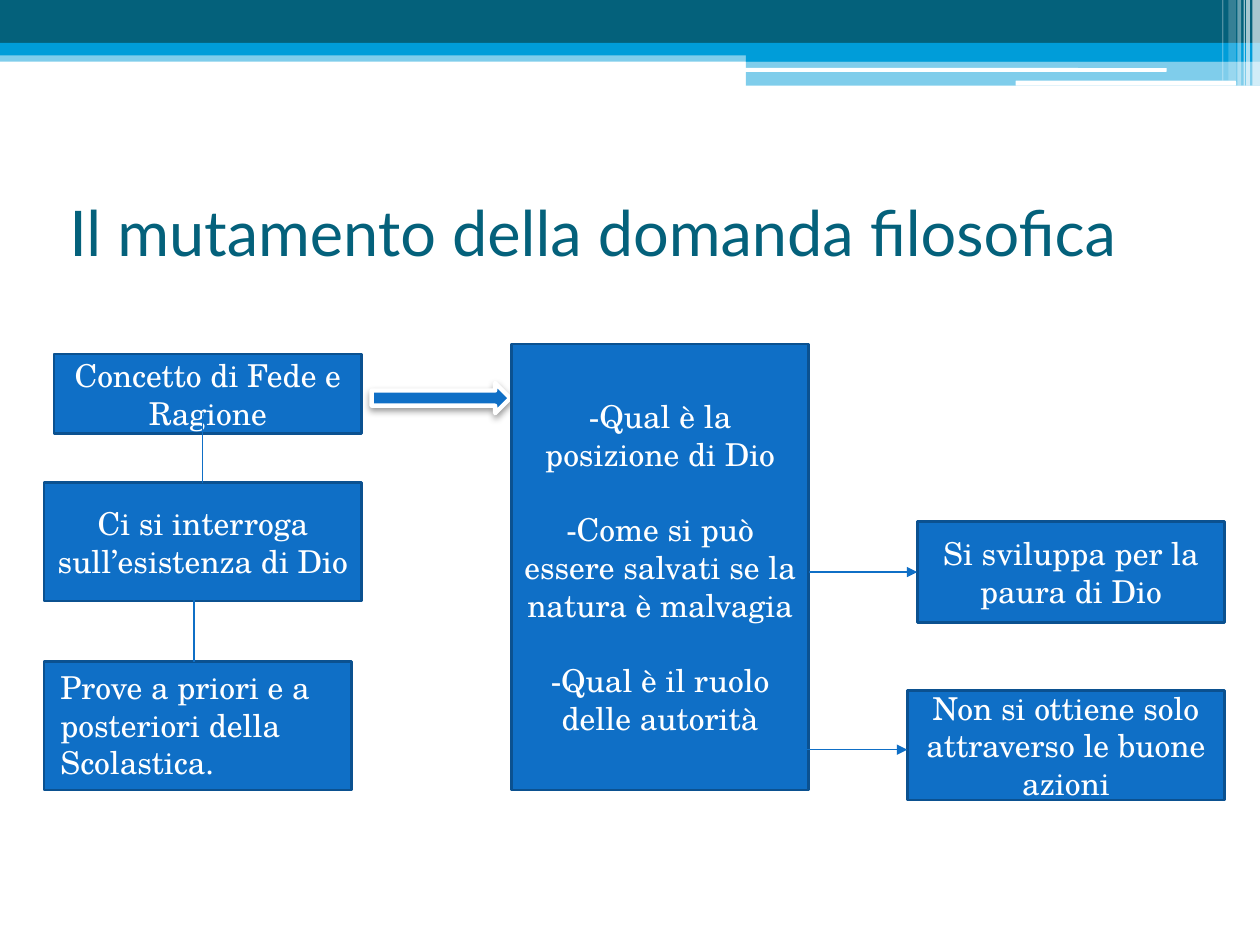
from lxml import etree
from pptx import Presentation
from pptx.dml.color import RGBColor
from pptx.enum.shapes import MSO_CONNECTOR, MSO_SHAPE
from pptx.enum.text import MSO_ANCHOR, PP_ALIGN
from pptx.oxml.ns import qn
from pptx.util import Inches, Pt

RECT = MSO_SHAPE.RECTANGLE
ROUND = MSO_SHAPE.ROUNDED_RECTANGLE
ARROW = MSO_SHAPE.RIGHT_ARROW
STRAIGHT = MSO_CONNECTOR.STRAIGHT
TOP, MIDDLE = MSO_ANCHOR.TOP, MSO_ANCHOR.MIDDLE
LEFT, CENTER = PP_ALIGN.LEFT, PP_ALIGN.CENTER
TOP_SIDE, LEFT_SIDE = 0, 1


def rgb(hex_color):
    return RGBColor.from_string(hex_color)


def child(parent, tag, **attrs):
    """Append a DrawingML element with the given attributes."""
    return etree.SubElement(parent, qn(tag), {k: str(v) for k, v in attrs.items()})


class SlideBuilder:
    """Style of the deck and the slide being filled."""

    white, teal, sky = "FFFFFF", "04617B", "009DD9"
    blue, border = "0F6FC6", "0B5190"
    title_font, body_font = "Lato", "TeX Gyre Schola"
    inset = 0.05

    def __init__(self, slide):
        self.slide = slide

    def shape(self, kind, x, y, w, h, fill, alpha=100, line=None, line_pt=1.5):
        sp = self.slide.shapes.add_shape(
            kind, Inches(x), Inches(y), Inches(w), Inches(h))
        sp.shadow.inherit = False
        sp.fill.solid()
        sp.fill.fore_color.rgb = rgb(fill)
        if alpha < 100:
            color = sp._element.spPr.find(qn("a:solidFill"))[0]
            child(color, "a:alpha", val=alpha * 1000)
        if line:
            sp.line.color.rgb = rgb(line)
            sp.line.width = Pt(line_pt)
        else:
            sp.line.fill.background()
        return sp

    def text(self, sp, lines, font, size, color, align, anchor, gap=0, left=inset):
        tf = sp.text_frame
        tf.word_wrap = True
        tf.vertical_anchor = anchor
        tf.margin_left = Inches(left)
        tf.margin_right = tf.margin_top = tf.margin_bottom = Inches(self.inset)
        for i, line in enumerate(lines):
            p = tf.add_paragraph() if i else tf.paragraphs[0]
            p.text = line
            p.alignment = align
            p.space_before = Pt(gap if i else 0)
            p.font.name = font
            p.font.size = Pt(size)
            p.font.color.rgb = rgb(color)

    def title(self, x, y, w, h, text):
        sp = self.slide.shapes.add_textbox(
            Inches(x), Inches(y), Inches(w), Inches(h))
        self.text(sp, [text], self.title_font, 36, self.teal, LEFT, MIDDLE)

    def box(self, x, y, w, h, *lines, align=CENTER, anchor=MIDDLE, left=inset):
        sp = self.shape(RECT, x, y, w, h, self.blue, line=self.border)
        self.text(sp, lines, self.body_font, 18, self.white, align, anchor,
                  gap=21.6, left=left)
        return sp

    def block_arrow(self, x, y, w, h):
        sp = self.shape(ARROW, x, y, w, h, self.blue, line=self.white, line_pt=2.5)
        effects = sp._element.spPr.find(qn("a:effectLst"))
        shadow = child(effects, "a:outerShdw", blurRad=Pt(4), dist=Pt(2),
                       dir=90 * 60000, rotWithShape=0)
        child(child(shadow, "a:srgbClr", val="000000"), "a:alpha", val=40000)

    def connector(self, x1, y1, x2, y2, target=None, side=None, arrow=False):
        cxn = self.slide.shapes.add_connector(
            STRAIGHT, Inches(x1), Inches(y1), Inches(x2), Inches(y2))
        if target is not None:
            cxn.end_connect(target, side)
        cxn.line.color.rgb = rgb(self.blue)
        cxn.line.width = Pt(0.75)
        if arrow:
            child(cxn.line._get_or_add_ln(), "a:tailEnd", type="triangle")
        child(cxn._element.spPr, "a:effectLst")

    def header(self):
        bands = [
            (RECT, 0, 0.4, 10, 0.09, self.sky, 50),
            (RECT, 0, 0, 10, 0.34, self.teal, 100),
            (RECT, 0, 0.34, 10, 0.1, self.sky, 100),
            (RECT, 5.92, 0.39, 4.08, 0.1, self.sky, 100),
            (RECT, 5.92, 0.48, 4.08, 0.2, self.sky, 50),
            (ROUND, 5.91, 0.54, 3.35, 0.03, self.white, 100),
            (ROUND, 8.06, 0.64, 1.75, 0.04, self.white, 100),
        ]
        for band in bands:
            self.shape(*band)
        stripes = [
            (9.94, 0.06, 0.68, 65), (9.89, 0.03, 0.68, 65), (9.87, 0.01, 0.68, 60),
            (9.82, 0.03, 0.68, 40), (9.75, 0.06, 0.64, 20), (9.7, 0.01, 0.64, 30),
        ]
        for x, w, h, alpha in stripes:
            self.shape(RECT, x, 0, w, h, self.white, alpha)


def main():
    prs = Presentation()
    prs.slide_width, prs.slide_height = Inches(10), Inches(7.5)
    s = SlideBuilder(prs.slides.add_slide(prs.slide_layouts[6]))

    s.header()
    s.title(0.5, 1.25, 9, 1.17, "Il mutamento della domanda filosofica")

    s.box(0.43, 2.81, 2.44, 0.63, "Concetto di Fede e Ragione")
    existence = s.box(0.35, 3.83, 2.52, 0.94, "Ci si interroga sull’esistenza di Dio")
    s.box(0.35, 5.25, 2.44, 1.02, "Prove a priori e a posteriori della Scolastica.",
          align=LEFT, anchor=TOP, left=0.13)
    s.connector(1.61, 3.28, 1.61, 3.83, existence, TOP_SIDE)
    s.connector(1.54, 4.69, 1.54, 5.25)

    s.block_arrow(2.95, 3.04, 1.1, 0.24)
    s.box(4.06, 2.73, 2.36, 3.54,
          "-Qual è la posizione di Dio",
          "-Come si può essere salvati se la natura è malvagia",
          "-Qual è il ruolo delle autorità")

    fear = s.box(7.28, 4.14, 2.44, 0.8, "Si sviluppa per la paura di Dio")
    s.connector(6.42, 4.54, 7.28, 4.54, fear, LEFT_SIDE, arrow=True)
    s.box(7.2, 5.48, 2.52, 0.87, "Non si ottiene solo attraverso le buone azioni")
    s.connector(6.34, 5.95, 7.2, 5.95, arrow=True)

    prs.save("out.pptx")


if __name__ == "__main__":
    main()
